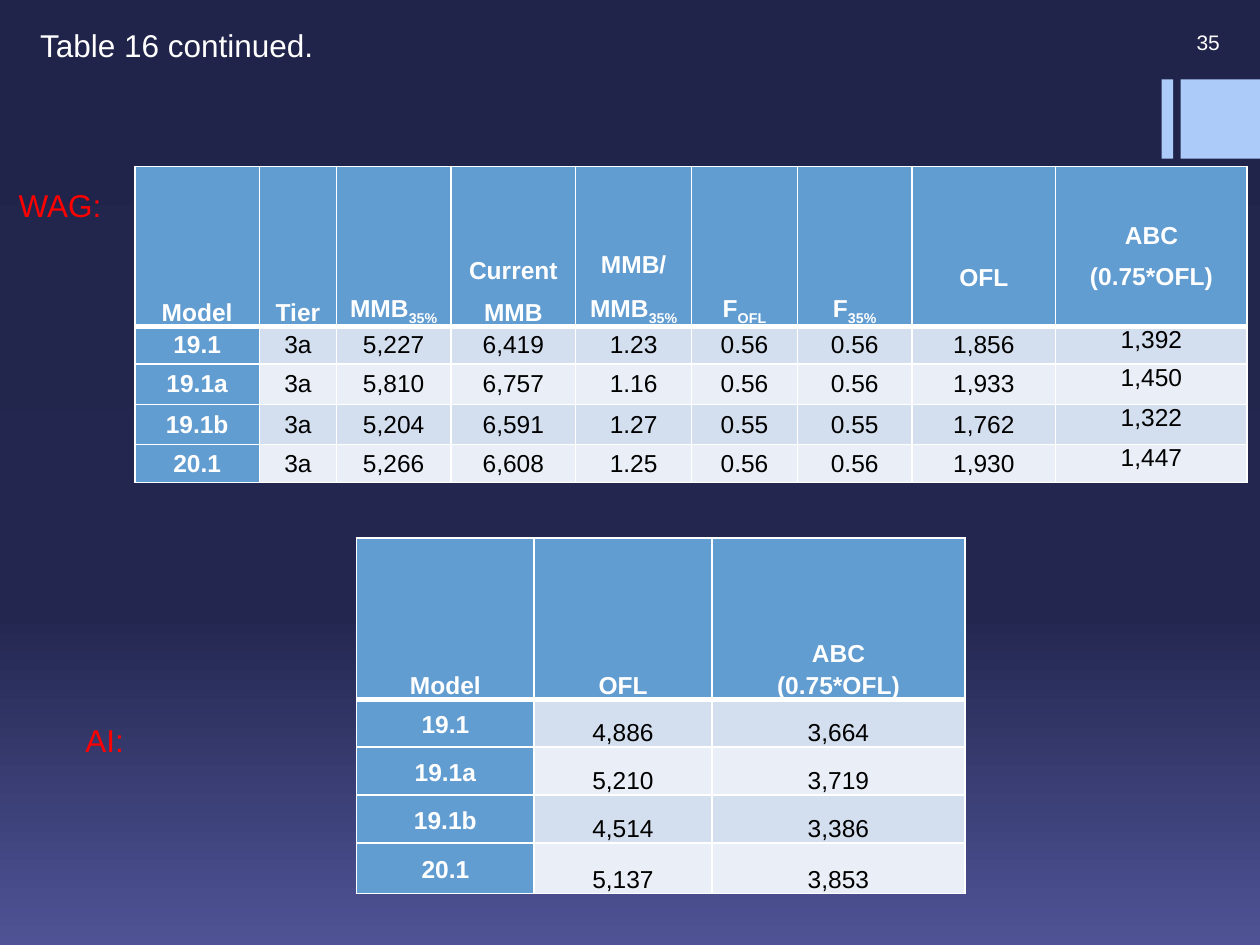
"""Build the slide with the WAG and AI results tables of Table 16."""
from lxml import etree
from pptx import Presentation
from pptx.dml.color import RGBColor
from pptx.enum.shapes import MSO_SHAPE
from pptx.enum.text import MSO_ANCHOR, PP_ALIGN
from pptx.oxml.ns import qn
from pptx.util import Inches, Pt

TOP, MIDDLE, BOTTOM = MSO_ANCHOR.TOP, MSO_ANCHOR.MIDDLE, MSO_ANCHOR.BOTTOM
LEFT, CENTER, RIGHT = PP_ALIGN.LEFT, PP_ALIGN.CENTER, PP_ALIGN.RIGHT
RECTANGLE = MSO_SHAPE.RECTANGLE

WHITE = RGBColor(0xFF, 0xFF, 0xFF)
BLACK = RGBColor(0x00, 0x00, 0x00)
RED = RGBColor(0xFF, 0x00, 0x00)
PALE_BLUE = RGBColor(0xAC, 0xCB, 0xF9)
HEADER_BLUE = RGBColor(0x62, 0x9D, 0xD1)
BANDS = (RGBColor(0xD3, 0xDF, 0xEE), RGBColor(0xEA, 0xEF, 0xF7))
BACKGROUND = (
    (0, RGBColor(0x21, 0x24, 0x4A)),
    (65, RGBColor(0x23, 0x27, 0x50)),
    (100, RGBColor(0x4F, 0x53, 0x95)),
)
FONT = "Arial"
HEADER_LINE = 0.335

ACCENT_BARS = ((9.22, 0.63, 0.09, 0.63), (9.37, 0.63, 0.63, 0.63))
LABELS = (
    ("35", (8.75, 0.17, 1.03, 0.33), 12, WHITE, RIGHT, MIDDLE),
    ("Table 16 continued.", (0.22, 0.16, 9.11, 0.71), 18, WHITE, LEFT, TOP),
    ("WAG:", (0.05, 1.43, 1.03, 0.4), 18, RED, LEFT, TOP),
    ("AI:", (0.58, 5.67, 1.03, 0.4), 18, RED, LEFT, TOP),
)
WAG = {
    "origin": (1.07, 1.32),
    "columns": (0.99, 0.61, 0.91, 0.99, 0.92, 0.84, 0.91, 1.14, 1.52),
    "heights": (1.27, 0.3, 0.32, 0.32, 0.3),
    "rows": (
        ("Model", "Tier", "MMB_35%", "Current MMB", "MMB/\nMMB_35%",
         "F_OFL", "F_35%", "OFL", "ABC\n(0.75*OFL)"),
        ("19.1", "3a", "5,227", "6,419", "1.23", "0.56", "0.56", "1,856", "1,392"),
        ("19.1a", "3a", "5,810", "6,757", "1.16", "0.56", "0.56", "1,933", "1,450"),
        ("19.1b", "3a", "5,204", "6,591", "1.27", "0.55", "0.55", "1,762", "1,322"),
        ("20.1", "3a", "5,266", "6,608", "1.25", "0.56", "0.56", "1,930", "1,447"),
    ),
    "header_anchors": (BOTTOM,) * 7 + (TOP,) * 2,
    "body_anchors": (MIDDLE,) * 8 + (TOP,),
    "header_insets": (0,) * 7 + (2 * HEADER_LINE, HEADER_LINE),
    "spacing": (1.5, 1.0),
}
AI = {
    "origin": (2.83, 4.27),
    "columns": (1.41, 1.41, 2.01),
    "heights": (1.28, 0.38, 0.38, 0.38, 0.4),
    "rows": (
        ("Model", "OFL", "ABC\n(0.75*OFL)"),
        ("19.1", "4,886", "3,664"),
        ("19.1a", "5,210", "3,719"),
        ("19.1b", "4,514", "3,386"),
        ("20.1", "5,137", "3,853"),
    ),
    "header_anchors": (BOTTOM,) * 3,
    "body_anchors": (MIDDLE, BOTTOM, BOTTOM),
    "header_insets": (0,) * 3,
    "spacing": (1.15, 1.15),
}


def add_color(parent, color):
    etree.SubElement(parent, qn("a:srgbClr"), val=str(color))


def paint_background(slide):
    fill = slide.background.fill
    fill.gradient()
    fill.gradient_angle = 270
    stops = next(slide.element.iter(qn("a:gsLst")))
    for stop in list(stops):
        stops.remove(stop)
    for percent, color in BACKGROUND:
        add_color(etree.SubElement(stops, qn("a:gs"), pos=str(percent * 1000)), color)


def format_font(font, size, color, bold=False):
    font.name, font.size, font.bold = FONT, Pt(size), bold
    font.color.rgb = color


def add_label(slide, text, box, size, color, alignment, anchor):
    text_frame = slide.shapes.add_textbox(*map(Inches, box)).text_frame
    text_frame.word_wrap = True
    text_frame.vertical_anchor = anchor
    text_frame.text = text
    paragraph = text_frame.paragraphs[0]
    paragraph.alignment = alignment
    format_font(paragraph.runs[0].font, size, color)


def set_borders(cell, row):
    widths = {"L": 1, "R": 1, "T": 3 if row == 1 else 1, "B": 3 if row == 0 else 1}
    properties = cell._tc.get_or_add_tcPr()
    for side, width in widths.items():
        line = etree.SubElement(properties, qn(f"a:ln{side}"), w=str(Pt(width)))
        add_color(etree.SubElement(line, qn("a:solidFill")), WHITE)


def write_cell(cell, text, color, bold, spacing):
    cell.text_frame.text = text
    for paragraph in cell.text_frame.paragraphs:
        base, _, subscript = paragraph.text.partition("_")
        paragraph.text = base
        paragraph.alignment = CENTER
        paragraph.line_spacing = spacing
        if subscript:
            run = paragraph.add_run()
            run.text = subscript
            run._r.get_or_add_rPr().set("baseline", "-25000")
        for run in paragraph.runs:
            format_font(run.font, 14, color, bold)


def add_results_table(slide, data):
    rows, columns, heights = data["rows"], data["columns"], data["heights"]
    box = (*data["origin"], sum(columns), sum(heights))
    table = slide.shapes.add_table(len(rows), len(columns), *map(Inches, box)).table
    for column, width in zip(table.columns, columns):
        column.width = Inches(width)
    for row, height in zip(table.rows, heights):
        row.height = Inches(height)
    for r, values in enumerate(rows):
        header = r == 0
        anchors = data["header_anchors" if header else "body_anchors"]
        for c, text in enumerate(values):
            cell = table.cell(r, c)
            emphasized = header or c == 0
            set_borders(cell, r)
            cell.fill.solid()
            cell.fill.fore_color.rgb = HEADER_BLUE if emphasized else BANDS[(r - 1) % 2]
            cell.vertical_anchor = anchors[c]
            cell.margin_left = cell.margin_right = Inches(0.07)
            cell.margin_top = Inches(data["header_insets"][c] if header else 0)
            cell.margin_bottom = 0
            write_cell(cell, text, WHITE if emphasized else BLACK, emphasized,
                       data["spacing"][0 if header else 1])


def main():
    presentation = Presentation()
    presentation.slide_width, presentation.slide_height = Inches(10), Inches(7.5)
    slide = presentation.slides.add_slide(presentation.slide_layouts[6])
    paint_background(slide)
    for box in ACCENT_BARS:
        bar = slide.shapes.add_shape(RECTANGLE, *map(Inches, box))
        bar.shadow.inherit = False
        bar.fill.solid()
        bar.fill.fore_color.rgb = PALE_BLUE
        bar.line.fill.background()
    for label in LABELS:
        add_label(slide, *label)
    for data in (WAG, AI):
        add_results_table(slide, data)
    presentation.save("out.pptx")


if __name__ == "__main__":
    main()
